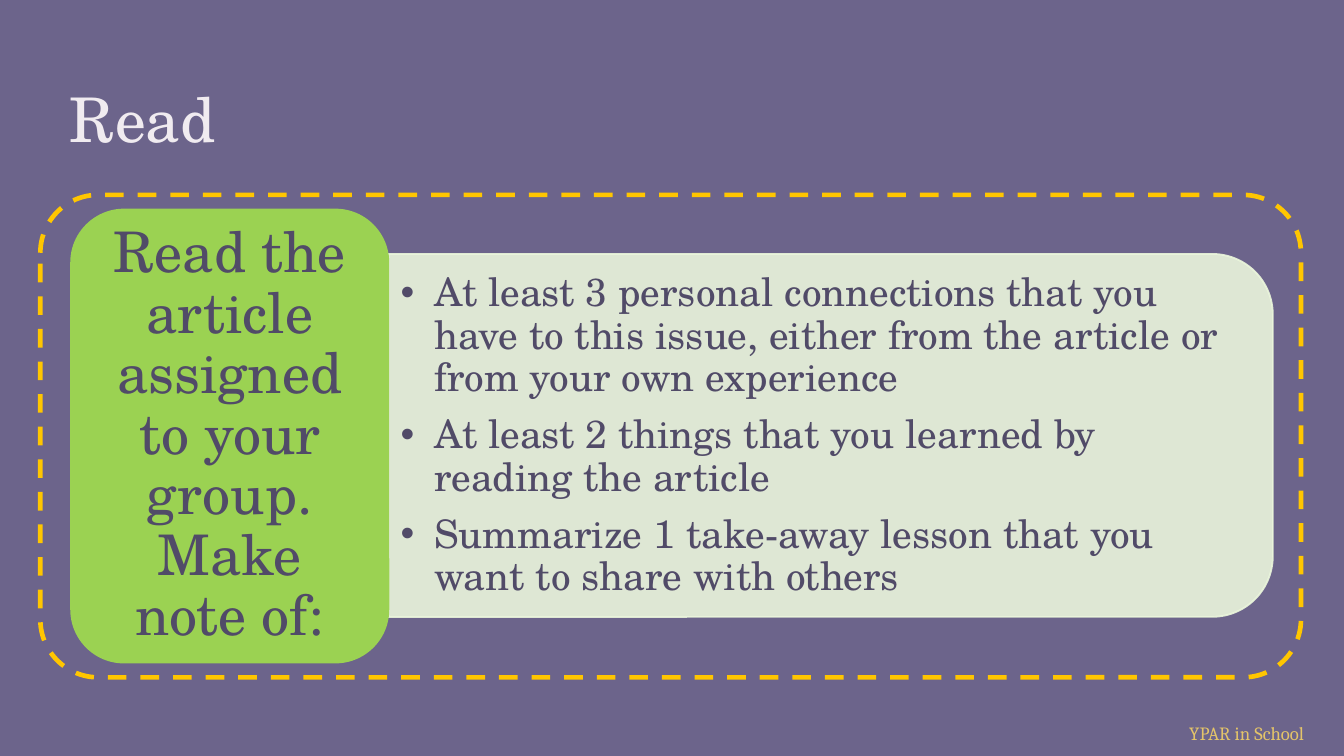
"""Build the reading-task slide: a prompt card, a panel of bullets and a dashed frame."""
from lxml import etree
from pptx import Presentation
from pptx.dml.color import RGBColor
from pptx.enum.dml import MSO_LINE
from pptx.enum.shapes import MSO_SHAPE
from pptx.enum.text import MSO_ANCHOR, MSO_AUTO_SIZE, PP_ALIGN
from pptx.oxml.ns import qn
from pptx.util import Inches, Pt

ROUND, ROUND_TOP = MSO_SHAPE.ROUNDED_RECTANGLE, MSO_SHAPE.ROUND_2_SAME_RECTANGLE
DASH = MSO_LINE.DASH
MIDDLE, BOTTOM, TOP = MSO_ANCHOR.MIDDLE, MSO_ANCHOR.BOTTOM, MSO_ANCHOR.TOP
LEFT, CENTER = PP_ALIGN.LEFT, PP_ALIGN.CENTER
NO_FIT = MSO_AUTO_SIZE.NONE

TITLE = "Read"
PROMPT = "Read the article assigned to your group. Make note of:"
TASKS = [
    "At least 3 personal connections that you have to this issue, "
    "either from the article or from your own experience",
    "At least 2 things that you learned by reading the article",
    "Summarize 1 take-away lesson that you want to share with others",
]
FOOTER = "YPAR in School"
COLORS = {
    "background": "6C648B", "title": "F0EBF0", "text": "514B68", "footer": "E4C469",
    "panel": "EBF6DC", "card": "9BD252", "frame": "FFC600",
}
FONT, FOOTER_FONT = "TeX Gyre Schola", "Cambria"


def rgb(name):
    return RGBColor.from_string(COLORS[name])


def place(sp, x, y, w, h):
    sp.left, sp.top, sp.width, sp.height = (Inches(v) for v in (x, y, w, h))


def add_box(s, kind, box, line, width, fill=None):
    sp = s.shapes.add_shape(kind, *(Inches(v) for v in box))
    sp.shadow.inherit = False
    if fill:
        sp.fill.solid()
        sp.fill.fore_color.rgb = rgb(fill)
    else:
        sp.fill.background()
    sp.line.color.rgb = rgb(line)
    sp.line.width = Pt(width)
    return sp


def set_alpha(sp, percent):
    for color in sp._element.spPr.iter(qn("a:srgbClr")):
        etree.SubElement(color, qn("a:alpha"), val=str(percent * 1000))


def write(sp, texts, size, color, font=FONT, align=LEFT, anchor=MIDDLE,
          inset=(0.1, 0.05), spacing=1.0, after=0, bullet=None, wrap=True):
    tf = sp.text_frame
    tf.auto_size, tf.word_wrap, tf.vertical_anchor = NO_FIT, wrap, anchor
    tf.margin_left = tf.margin_right = Inches(inset[0])
    tf.margin_top = tf.margin_bottom = Inches(inset[1])
    for i, text in enumerate(texts):
        p = tf.add_paragraph() if i else tf.paragraphs[0]
        p.alignment, p.line_spacing = align, spacing
        p.space_before, p.space_after = Pt(0), Pt(after)
        if bullet:
            pPr = p._p.get_or_add_pPr()
            pPr.set("marL", str(Inches(0.25)))
            pPr.set("indent", str(Inches(-0.25)))
            etree.SubElement(pPr, qn("a:buChar"), char=bullet)
        r = p.add_run()
        r.text = text
        r.font.name, r.font.size = font, Pt(size)
        r.font.color.rgb = rgb(color)


def main():
    prs = Presentation()
    prs.slide_width, prs.slide_height = Inches(10), Inches(10 * 9 / 16)
    s = prs.slides.add_slide(prs.slide_layouts[1])
    s.background.fill.solid()
    s.background.fill.fore_color.rgb = rgb("background")

    title, body = s.placeholders
    place(title, 0.42, 0.5, 9.15, 0.75)
    write(title, [TITLE], 33, "title", anchor=BOTTOM, inset=(0.1, 0.1))

    panel = add_box(s, ROUND_TOP, (4.83, -0.05, 2.7, 6.58), "panel", 1, "panel")
    panel.rotation = 90
    set_alpha(panel, 90)

    place(body, 2.89, 2.03, 6.45, 2.43)
    panel._element.addnext(body._element)
    write(body, TASKS, 21, "text", inset=(0.09, 0.04), spacing=0.9, after=8, bullet="•")

    card = add_box(s, ROUND, (0.53, 1.56, 2.36, 3.37), "card", 1, "card")
    write(card, [PROMPT], 30, "text", align=CENTER, inset=(0.12, 0.06), spacing=0.9)

    frame = add_box(s, ROUND, (0.3, 1.45, 9.38, 3.59), "frame", 2.5)
    frame.adjustments[0] = 0.12
    frame.line.dash_style = DASH

    footer = s.shapes.add_textbox(Inches(8.75), Inches(5.32), Inches(1.2), Inches(0.27))
    write(footer, [FOOTER], 10, "footer", font=FOOTER_FONT, anchor=TOP, wrap=False)
    prs.save("out.pptx")


if __name__ == "__main__":
    main()
